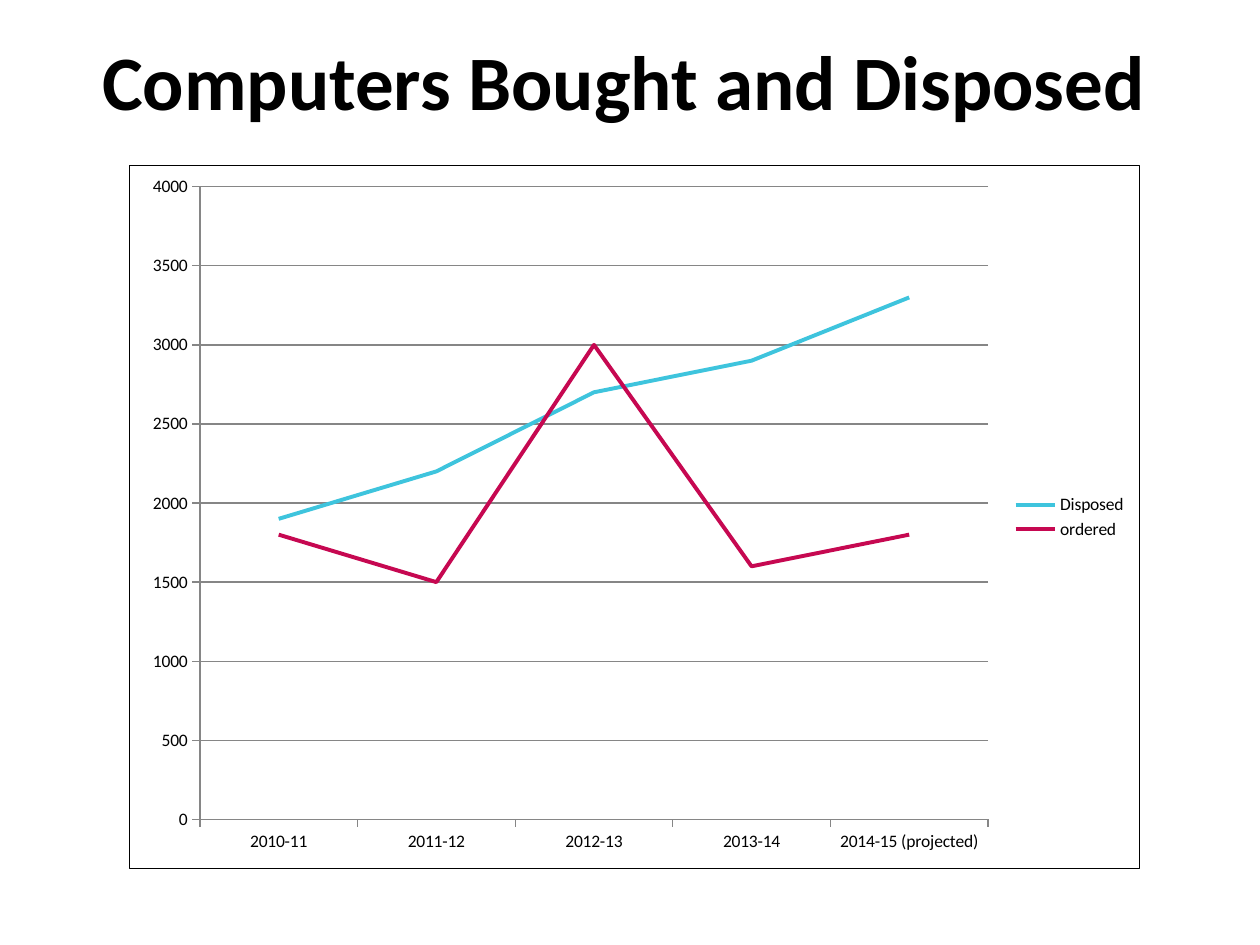
from lxml.etree import SubElement
from pptx import Presentation
from pptx.chart.data import CategoryChartData
from pptx.dml.color import RGBColor
from pptx.enum.chart import XL_CHART_TYPE, XL_LEGEND_POSITION, XL_MARKER_STYLE, XL_TICK_MARK
from pptx.enum.text import MSO_ANCHOR, PP_ALIGN
from pptx.oxml import parse_xml
from pptx.oxml.ns import nsdecls, qn
from pptx.util import Inches, Pt

FONT = "Calibri"
COLORS = {"text": "000000", "axis": "868686", "disposed": "3EC4DD", "ordered": "C60851"}
YEARS = ["2010-11", "2011-12", "2012-13", "2013-14", "2014-15 (projected)"]
SERIES = {
    "Disposed": [1900, 2200, 2700, 2900, 3300],
    "ordered": [1800, 1500, 3000, 1600, 1800],
}


class Deck:
    def __init__(self, width, height):
        self.prs = Presentation()
        self.prs.slide_width, self.prs.slide_height = Inches(width), Inches(height)
        self.s = None

    def slide(self):
        self.s = self.prs.slides.add_slide(self.prs.slide_layouts[5])

    def style(self, font, size, bold=False):
        font.name, font.size, font.bold = FONT, Pt(size), bold
        font.color.rgb = RGBColor.from_string(COLORS["text"])

    def line(self, line, color, width):
        line.color.rgb = RGBColor.from_string(COLORS[color])
        line.width = Pt(width)

    def title(self, text, x, y, w, h):
        sp = self.s.shapes.title
        sp.left, sp.top, sp.width, sp.height = map(Inches, (x, y, w, h))
        tf = sp.text_frame
        tf.text = text
        tf.vertical_anchor = MSO_ANCHOR.MIDDLE
        p = tf.paragraphs[0]
        p.alignment = PP_ALIGN.CENTER
        self.style(p.runs[0].font, 44, True)

    def line_chart(self, cats, series, x, y, w, h):
        data = CategoryChartData()
        data.categories = cats
        for name, values in series.items():
            data.add_series(name, values)
        chart = self.s.shapes.add_chart(
            XL_CHART_TYPE.LINE, *map(Inches, (x, y, w, h)), data).chart
        self.style(chart.font, 10)
        chart.has_title = False
        chart.has_legend = True
        chart.legend.position = XL_LEGEND_POSITION.RIGHT
        chart.legend.include_in_layout = False

        # Axes and gridlines
        for axis in (chart.category_axis, chart.value_axis):
            axis.major_tick_mark = XL_TICK_MARK.OUTSIDE
            axis.minor_tick_mark = XL_TICK_MARK.NONE
            self.line(axis.format.line, "axis", 0.75)
        axis = chart.value_axis
        axis.minimum_scale, axis.maximum_scale, axis.major_unit = 0, 4000, 500
        axis.has_major_gridlines = True
        self.line(axis.major_gridlines.format.line, "axis", 0.75)

        # Series lines
        chart.plots[0].vary_by_categories = False
        for ser in chart.plots[0].series:
            ser.smooth = False
            ser.marker.style = XL_MARKER_STYLE.NONE
            self.line(ser.format.line, ser.name.lower(), 2.25)
        return chart

    def plot_area(self, chart, x, y, w, h):
        area = chart.plots[0]._element.getparent()
        for old in area.findall(qn("c:layout")):
            area.remove(old)
        layout = parse_xml(f"<c:layout {nsdecls('c')}><c:manualLayout/></c:layout>")
        values = {"layoutTarget": "inner", "xMode": "edge", "yMode": "edge",
                  "x": x, "y": y, "w": w, "h": h}
        for tag, value in values.items():
            SubElement(layout[0], qn(f"c:{tag}")).set("val", str(value))
        area.insert(0, layout)

    def border(self, chart, color, width):
        chart._chartSpace.find(qn("c:chart")).addnext(parse_xml(
            f'<c:spPr {nsdecls("c", "a")}><a:noFill/><a:ln w="{Pt(width)}"><a:solidFill>'
            f'<a:srgbClr val="{COLORS[color]}"/></a:solidFill></a:ln></c:spPr>'))


def main():
    deck = Deck(10, 7.5)
    deck.slide()

    # Title
    deck.title("Computers Bought and Disposed", 0.35, 0.21, 9.21, 0.84)

    # Chart
    chart = deck.line_chart(YEARS, SERIES, 1.02, 1.31, 8.03, 5.59)
    deck.plot_area(chart, 0.07, 0.03, 0.78, 0.9)
    deck.border(chart, "text", 0.75)

    deck.prs.save("out.pptx")


if __name__ == "__main__":
    main()
